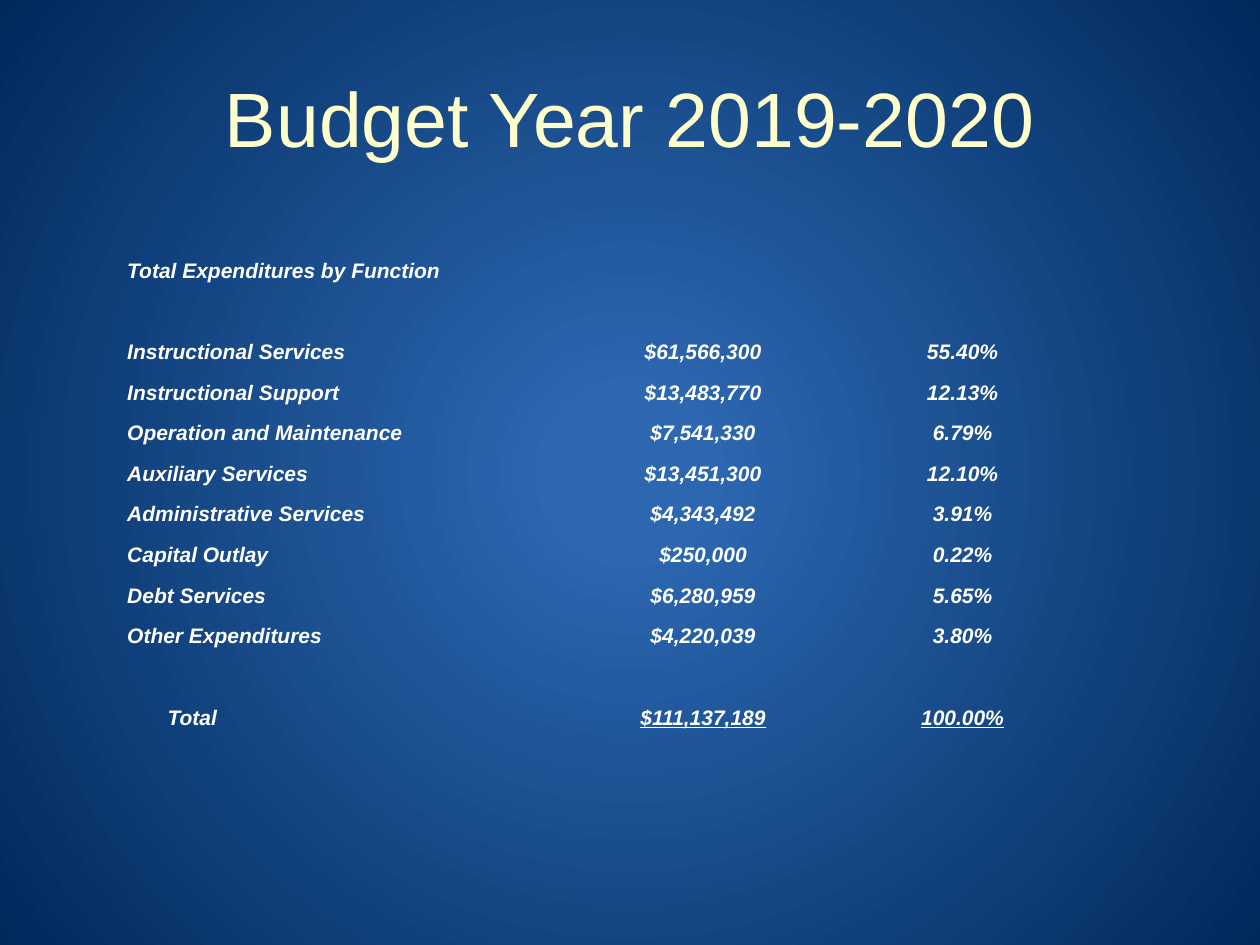
from lxml.etree import SubElement
from pptx import Presentation
from pptx.dml.color import RGBColor
from pptx.enum.text import MSO_ANCHOR, PP_ALIGN
from pptx.oxml.ns import qn
from pptx.util import Inches, Pt

COLORS = {"center": "2C67B0", "edge": "00295C", "title": "FFFFCC", "text": "FFFFFF"}
FONT = "Arial"
NO_STYLE_NO_GRID = "{2D5ABB26-0587-4C30-8999-92F81FD0307C}"

TITLE = "Budget Year 2019-2020"
EXPENDITURES = [
    ("Total Expenditures by Function", "", ""),
    ("", "", ""),
    ("Instructional Services", "$61,566,300", "55.40%"),
    ("Instructional Support", "$13,483,770", "12.13%"),
    ("Operation and Maintenance", "$7,541,330", "6.79%"),
    ("Auxiliary Services", "$13,451,300", "12.10%"),
    ("Administrative Services", "$4,343,492", "3.91%"),
    ("Capital Outlay", "$250,000", "0.22%"),
    ("Debt Services", "$6,280,959", "5.65%"),
    ("Other Expenditures", "$4,220,039", "3.80%"),
    ("", "", ""),
    ("Total", "$111,137,189", "100.00%"),
]
COLUMN_WIDTHS = (3.71, 1.74, 2.38)
TABLE_HEIGHT = 3.87
CELL_MARGIN = 0.01
TOTAL_INDENT = 0.33


def style_font(paragraph, size, color):
    paragraph.font.name = FONT
    paragraph.font.size = Pt(size)
    paragraph.font.color.rgb = RGBColor.from_string(COLORS[color])


def add_background(slide):
    """Fill the background with a gradient spreading from the slide's center."""
    fill = slide.background.fill
    fill.gradient()
    for stop, position, color in zip(fill.gradient_stops, (0.1, 1), ("center", "edge")):
        stop.position = position
        stop.color.rgb = RGBColor.from_string(COLORS[color])
    gradient = next(slide.element.iter(qn("a:gradFill")))
    gradient.remove(gradient.find(qn("a:lin")))
    circle = SubElement(gradient, qn("a:path"), path="circle")
    SubElement(circle, qn("a:fillToRect"), l="50000", t="50000", r="50000", b="50000")


def add_title(slide):
    box = slide.shapes.add_textbox(Inches(0.5), Inches(0.3), Inches(9), Inches(1.25))
    frame = box.text_frame
    frame.word_wrap = True
    frame.vertical_anchor = MSO_ANCHOR.MIDDLE
    paragraph = frame.paragraphs[0]
    paragraph.text = TITLE
    paragraph.alignment = PP_ALIGN.CENTER
    style_font(paragraph, 44, "title")


def fill_cell(cell, text, is_label, is_total):
    cell.fill.background()
    cell.vertical_anchor = MSO_ANCHOR.BOTTOM
    cell.margin_left = Inches(TOTAL_INDENT if is_total and is_label else CELL_MARGIN)
    cell.margin_right = cell.margin_top = Inches(CELL_MARGIN)
    cell.margin_bottom = 0
    paragraph = cell.text_frame.paragraphs[0]
    paragraph.text = text
    paragraph.alignment = PP_ALIGN.LEFT if is_label else PP_ALIGN.CENTER
    style_font(paragraph, 12, "text")
    paragraph.font.bold = paragraph.font.italic = True
    paragraph.font.underline = is_total and not is_label


def add_expenditures(slide):
    row_count = len(EXPENDITURES)
    frame = slide.shapes.add_table(
        row_count, len(COLUMN_WIDTHS), Inches(1), Inches(1.92),
        Inches(sum(COLUMN_WIDTHS)), Inches(TABLE_HEIGHT))
    table = frame.table
    table.first_row = table.horz_banding = False
    next(slide.element.iter(qn("a:tableStyleId"))).text = NO_STYLE_NO_GRID
    for column, width in zip(table.columns, COLUMN_WIDTHS):
        column.width = Inches(width)
    for row_index, (row, texts) in enumerate(zip(table.rows, EXPENDITURES)):
        row.height = Inches(TABLE_HEIGHT / row_count)
        for column_index, (cell, text) in enumerate(zip(row.cells, texts)):
            fill_cell(cell, text, column_index == 0, row_index == row_count - 1)


def main():
    presentation = Presentation()
    presentation.slide_width = Inches(10)
    presentation.slide_height = Inches(7.5)
    slide = presentation.slides.add_slide(presentation.slide_layouts[6])
    add_background(slide)
    add_title(slide)
    add_expenditures(slide)
    presentation.save("out.pptx")


if __name__ == "__main__":
    main()
